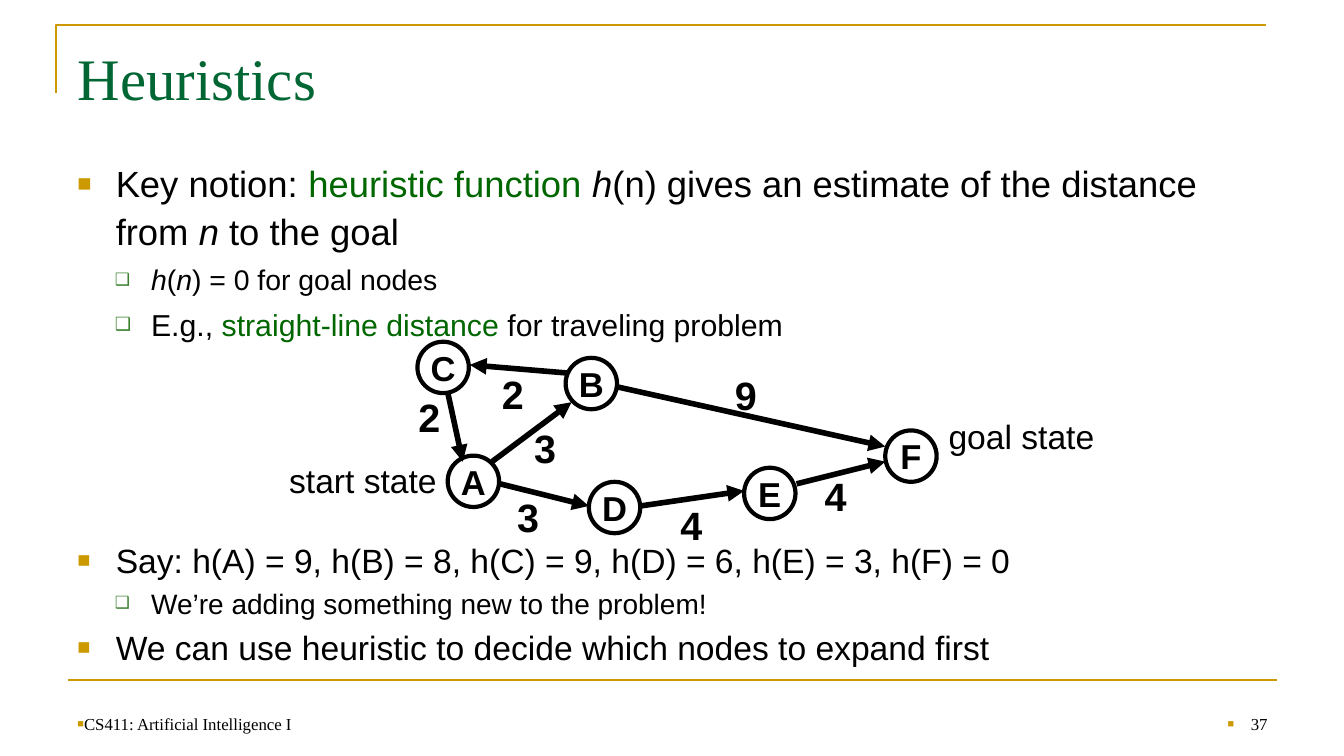
from lxml import etree
from pptx import Presentation, oxml
from pptx.dml.color import RGBColor
from pptx.enum import shapes, text
from pptx.oxml import ns
from pptx.util import Inches, Pt

COLORS = {"gold": "CC9900", "title": "006633", "term": "006600",
          "box_bullet": "3B812F", "ink": "000000", "paper": "FFFFFF"}
SANS, SERIF = "Arial", "Times New Roman"
SQUARE = ("■", "gold", 65)
HOLLOW = ("❑", "box_bullet", 60)

NODE_SIZE = 0.51
NODES = {"A": (1.67, 1.13), "B": (2.84, 0.16), "C": (1.37, 0),
         "D": (3.07, 1.39), "E": (4.61, 1.25), "F": (6.01, 0.88)}
EDGES = [((2.11, 1.19), (2.9, 0.6), "3", (2.43, 0.74)),
         ((2.85, 0.31), (1.89, 0.23), "2", (2.11, 0.21)),
         ((1.67, 0.5), (1.82, 1.19), "2", (1.28, 0.43)),
         ((3.36, 0.45), (6.01, 1.04), "9", (4.42, 0.22)),
         ((2.19, 1.41), (3.07, 1.63), "3", (2.26, 1.43)),
         ((3.58, 1.63), (4.61, 1.48), "4", (3.88, 1.51)),
         ((5.13, 1.41), (6.01, 1.19), "4", (5.31, 1.22))]
STATES = [("start state", (0, 1.1)), ("goal state", (6.54, 0.67))]

NOTION = [
    (0, 26, [("Key notion: ", {}), ("heuristic function ", {"color": "term"}),
             ("h", {"italic": True}),
             ("(n) gives an estimate of the distance from ", {}),
             ("n", {"italic": True}), (" to the goal", {})]),
    (1, 20.3, [("h", {"italic": True}), ("(", {}), ("n", {"italic": True}),
               (") = 0 for goal nodes", {})]),
    (1, 21.6, [("E.g., ", {}), ("straight-line distance", {"color": "term"}),
               (" for traveling problem", {})]),
]
EXAMPLE = [
    (0, 24, [("Say: h(A) = 9, h(B) = 8, h(C) = 9, h(D) = 6, h(E) = 3, h(F) = 0", {})]),
    (1, 20, [("We’re adding something new to the problem!", {})]),
    (0, 24, [("We can use heuristic to decide which nodes to expand first", {})]),
]


def rgb(name):
    """Return the named colour."""
    return RGBColor.from_string(COLORS[name])


def write(paragraph, words, size=24, font=SANS, color="ink", bold=False, italic=False):
    """Add a formatted run to a paragraph."""
    run = paragraph.add_run()
    run.text = words
    run.font.size, run.font.name = Pt(size), font
    run.font.bold, run.font.italic = bold, italic
    run.font.color.rgb = rgb(color)


def set_bullet(paragraph, bullet, margin=0, hanging=0):
    """Give a paragraph a bullet and a hanging indent."""
    character, color, percent = bullet
    properties = paragraph._p.get_or_add_pPr()
    properties.set("marL", str(Inches(margin)))
    properties.set("indent", str(-Inches(hanging)))
    for markup in (f'<a:buClr {ns.nsdecls("a")}><a:srgbClr val="{COLORS[color]}"/></a:buClr>',
                   f'<a:buSzPct {ns.nsdecls("a")} val="{percent * 1000}"/>',
                   f'<a:buFont {ns.nsdecls("a")} typeface="{SANS}"/>',
                   f'<a:buChar {ns.nsdecls("a")} char="{character}"/>'):
        properties.append(oxml.parse_xml(markup))


def add_text_frame(slide, box, anchor=text.MSO_ANCHOR.TOP, wrap=True):
    """Add a text box and return its frame."""
    frame = slide.shapes.add_textbox(*map(Inches, box)).text_frame
    frame.word_wrap, frame.vertical_anchor = wrap, anchor
    return frame


def add_line(slide, start, end, color, width, arrow=False):
    """Draw a straight line, with an arrowhead at its end if asked."""
    line = slide.shapes.add_connector(shapes.MSO_CONNECTOR.STRAIGHT,
                                      *map(Inches, (*start, *end)))
    line.line.color.rgb, line.line.width = rgb(color), Pt(width)
    if arrow:
        etree.SubElement(line.line._get_or_add_ln(), ns.qn("a:tailEnd"), type="triangle")
    etree.SubElement(line._element.spPr, ns.qn("a:effectLst"))


def add_frame(slide, left, top, width):
    """Draw the corner rule above the title and the rule above the footer."""
    builder = slide.shapes.build_freeform(Inches(left), Inches(top + 0.67))
    builder.add_line_segments([(Inches(left), Inches(top)),
                               (Inches(left + width), Inches(top))], close=False)
    corner = builder.convert_to_shape()
    corner.shadow.inherit = False
    corner.fill.background()
    corner.line.color.rgb, corner.line.width = rgb("gold"), Pt(1.5)
    add_line(slide, (left + 0.11, top + 6.5), (left + 0.11 + width, top + 6.5), "gold", 1.5)


def add_title(slide, words, left, top, width, height):
    """Place and format the title placeholder."""
    title = slide.shapes.title
    title.left, title.top, title.width, title.height = map(Inches, (left, top, width, height))
    frame = title.text_frame
    frame.auto_size = text.MSO_AUTO_SIZE.NONE
    frame.vertical_anchor = text.MSO_ANCHOR.TOP
    frame.paragraphs[0].alignment = text.PP_ALIGN.LEFT
    write(frame.paragraphs[0], words, size=42, font=SERIF, color="title")


def add_bullets(slide, items, box, line_spacing=1.0):
    """Fill a box with bulleted paragraphs on two levels."""
    frame = add_text_frame(slide, box)
    for index, (level, size, runs) in enumerate(items):
        paragraph = frame.add_paragraph() if index else frame.paragraphs[0]
        paragraph.level, paragraph.line_spacing = level, line_spacing
        paragraph.space_before = Pt(size * 0.2 if index else 0)
        if level:
            set_bullet(paragraph, HOLLOW, 0.73, 0.36)
        else:
            set_bullet(paragraph, SQUARE, 0.38, 0.38)
        for words, style in runs:
            write(paragraph, words, size=size, **style)


def add_node(slide, letter, left, top):
    """Draw a circled graph node with its letter."""
    node = slide.shapes.add_shape(shapes.MSO_SHAPE.OVAL,
                                  *map(Inches, (left, top, NODE_SIZE, NODE_SIZE)))
    node.shadow.inherit = False
    node.fill.background()
    node.line.color.rgb, node.line.width = rgb("ink"), Pt(3)
    frame = node.text_frame
    frame.word_wrap, frame.vertical_anchor = False, text.MSO_ANCHOR.MIDDLE
    frame.margin_left = frame.margin_right = frame.margin_top = frame.margin_bottom = 0
    frame.paragraphs[0].alignment = text.PP_ALIGN.CENTER
    write(frame.paragraphs[0], letter, size=24.7, bold=True)


def add_graph(slide, left, top):
    """Draw the weighted graph with its start and goal labels."""
    def place(point):
        """Shift a point into the graph's box."""
        return left + point[0], top + point[1]

    for letter, corner in NODES.items():
        add_node(slide, letter, *place(corner))
    for start, end, weight, corner in EDGES:
        add_line(slide, place(start), place(end), "ink", 4, arrow=True)
        frame = add_text_frame(slide, (*place(corner), 0.42, 0.62),
                               text.MSO_ANCHOR.MIDDLE, wrap=False)
        write(frame.paragraphs[0], weight, size=28.2, bold=True)
    for label, corner in STATES:
        frame = add_text_frame(slide, (*place(corner), 1.67, 0.54),
                               text.MSO_ANCHOR.MIDDLE, wrap=False)
        write(frame.paragraphs[0], label)


def add_footer(slide, course, number, left, top, width, height):
    """Write the course name at the left and the slide number at the right."""
    number_width = 3.11
    for words, box_left, box_width, align, indent in (
            (course, left, 8.11, text.PP_ALIGN.LEFT, 0),
            (number, left + width - number_width, number_width, text.PP_ALIGN.RIGHT, 0.23)):
        frame = add_text_frame(slide, (box_left, top, box_width, height),
                               text.MSO_ANCHOR.BOTTOM)
        paragraph = frame.paragraphs[0]
        paragraph.alignment = align
        set_bullet(paragraph, SQUARE, indent, indent)
        write(paragraph, words, size=12, font=SERIF)


def main():
    """Build the slide and save it."""
    presentation = Presentation()
    presentation.slide_width, presentation.slide_height = Inches(13.33), Inches(7.5)
    slide = presentation.slides.add_slide(presentation.slide_layouts[5])
    slide.background.fill.solid()
    slide.background.fill.fore_color.rgb = rgb("paper")
    add_frame(slide, 0.56, 0.25, 12)
    add_title(slide, "Heuristics", 0.67, 0.36, 12, 1.19)
    add_bullets(slide, NOTION, (0.67, 1.51, 12, 1.85), line_spacing=1.1)
    add_bullets(slide, EXAMPLE, (0.67, 5.31, 12, 1.4))
    add_graph(slide, 2.77, 3.39)
    add_footer(slide, "CS411: Artificial Intelligence I", "37", 0.67, 6.83, 12, 0.5)
    presentation.save("out.pptx")


if __name__ == "__main__":
    main()
